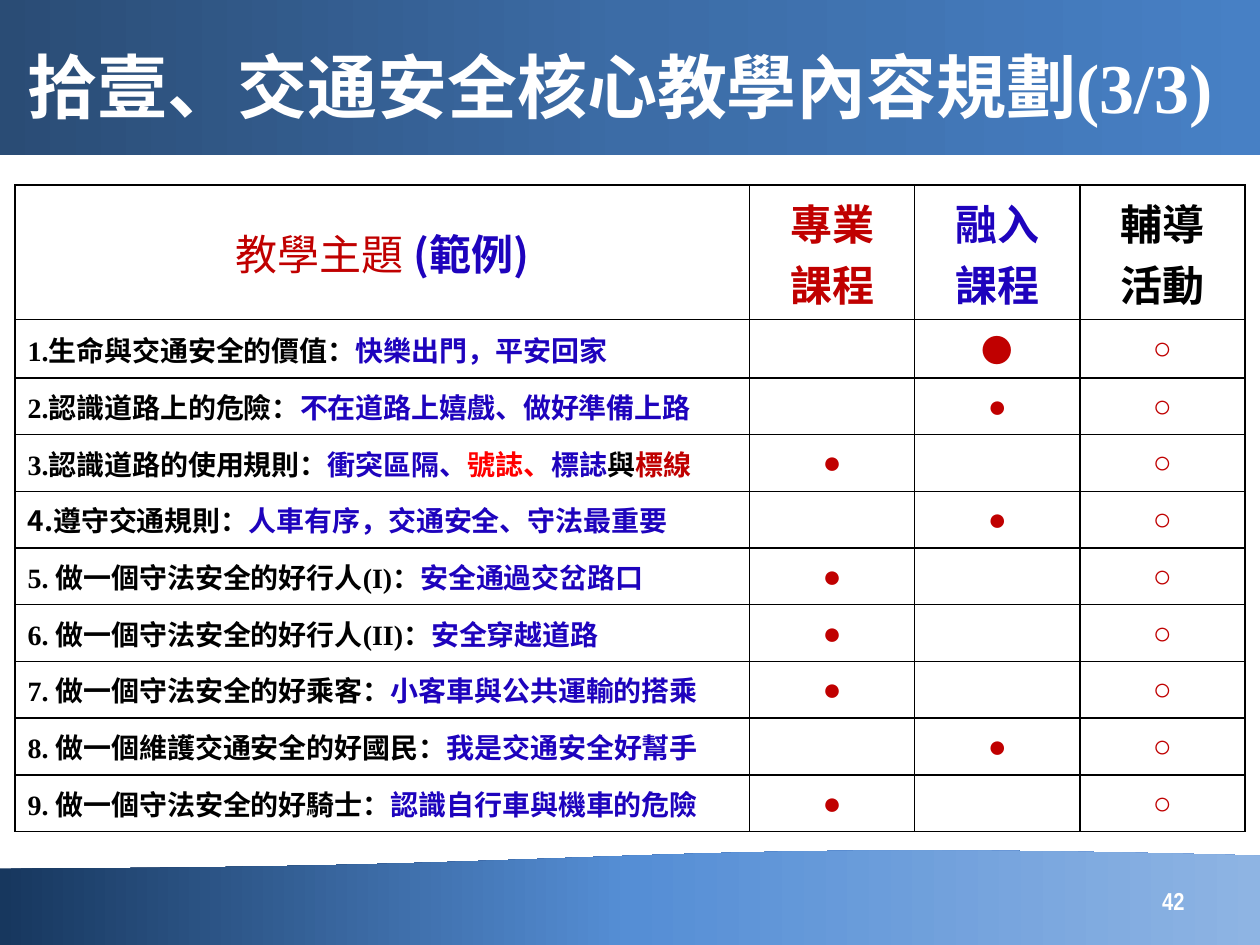
from lxml import etree
from pptx import Presentation
from pptx.dml.color import RGBColor
from pptx.enum.shapes import MSO_SHAPE
from pptx.enum.text import MSO_ANCHOR, MSO_AUTO_SIZE, PP_ALIGN
from pptx.oxml.ns import qn
from pptx.util import Inches, Pt

CENTER, LEFT, RIGHT = PP_ALIGN.CENTER, PP_ALIGN.LEFT, PP_ALIGN.RIGHT
JUSTIFY = PP_ALIGN.JUSTIFY
MIDDLE = MSO_ANCHOR.MIDDLE
TITLE_ONLY = 5

COLORS = {"black": "000000", "white": "FFFFFF", "blue": "1E03BD",
          "dark_red": "C00000", "red": "FF0000"}
HEADER_STOPS = [(0, "2A4C75"), (50, "3C6CA6"), (100, "4780C5")]
FOOTER_STOPS = [(0, "17375E"), (50, "558ED5"), (100, "8EB4E3")]

SERIF, SANS, NARROW = "Times New Roman", "Arial", "Arial Narrow"
CJK, CJK_TC = "Noto Sans CJK SC", "Noto Sans CJK TC"

COL_WIDTHS = [5.83, 1.31, 1.31, 1.31]
HEADER_HEIGHT, ROW_HEIGHT = 0.89, 0.45
COURSE_HEADS = [("專業", "課程", "dark_red"), ("融入", "課程", "blue"),
                ("輔導", "活動", "black")]

# Topic, its examples as (text, colour), and the column of the filled dot
TOPICS = [
    ("1.生命與交通安全的價值：", [("快樂出門，平安回家", "blue")], 2),
    ("2.認識道路上的危險：", [("不在道路上嬉戲、做好準備上路", "blue")], 2),
    ("3.認識道路的使用規則：",
     [("衝突區隔、", "blue"), ("號誌、", "red"), ("標誌", "blue"),
      ("與", "black"), ("標線", "dark_red")], 1),
    ("4.遵守交通規則：", [("人車有序，交通安全、守法最重要", "blue")], 2),
    ("5. 做一個守法安全的好行人(I)：", [("安全通過交岔路口", "blue")], 1),
    ("6. 做一個守法安全的好行人(II)：", [("安全穿越道路", "blue")], 1),
    ("7. 做一個守法安全的好乘客：", [("小客車與公共運輸的搭乘", "blue")], 1),
    ("8. 做一個維護交通安全的好國民：", [("我是交通安全好幫手", "blue")], 2),
    ("9. 做一個守法安全的好騎士：", [("認識自行車與機車的危險", "blue")], 1),
]


def add_run(p, text, size, color, font, bold=True, east_asian=CJK_TC):
    r = p.add_run()
    r.text = text
    r.font.size, r.font.bold, r.font.name = Pt(size), bold, font
    r.font.color.rgb = RGBColor.from_string(COLORS[color])
    ea = etree.SubElement(r.font._element, qn("a:ea"))
    ea.set("typeface", east_asian)


def add_band(slide, shape_type, box, stops, angle=0, rotation=0):
    sp = slide.shapes.add_shape(shape_type, *map(Inches, box))
    sp.rotation = rotation
    sp.shadow.inherit = False
    sp.line.fill.background()
    sp.fill.gradient()
    sp.fill.gradient_angle = angle
    gs_list = sp._element.spPr.find(".//" + qn("a:gsLst"))
    for gs in list(gs_list):
        gs_list.remove(gs)
    for pos, color in stops:
        gs = etree.SubElement(gs_list, qn("a:gs"), pos=str(pos * 1000))
        etree.SubElement(gs, qn("a:srgbClr"), val=color)


def add_title(slide, box):
    title = slide.shapes.title
    title.left, title.top, title.width, title.height = map(Inches, box)
    slide.shapes._spTree.append(title._element)  # in front of the band
    tf = title.text_frame
    tf.vertical_anchor, tf.word_wrap = MIDDLE, True
    tf.auto_size = MSO_AUTO_SIZE.NONE
    p = tf.paragraphs[0]
    p.alignment = LEFT
    add_run(p, "拾壹、交通安全核心教學內容規劃(3/3)", 40, "white", SERIF)


def set_borders(cell):
    tc_pr = cell._tc.get_or_add_tcPr()
    for i, side in enumerate(("a:lnL", "a:lnR", "a:lnT", "a:lnB")):
        ln = etree.Element(qn(side), w=str(Pt(1)))
        fill = etree.SubElement(ln, qn("a:solidFill"))
        etree.SubElement(fill, qn("a:srgbClr"), val=COLORS["black"])
        tc_pr.insert(i, ln)


def add_mark(cell, mark, font=SANS, bold=False):
    p = cell.text_frame.paragraphs[0]
    p.alignment = CENTER
    add_run(p, mark, 18, "dark_red", font, bold, east_asian=font)


def fill_header(table):
    p = table.cell(0, 0).text_frame.paragraphs[0]
    p.alignment = CENTER
    add_run(p, "教學主題 ", 24, "dark_red", CJK, bold=False)
    add_run(p, "(範例)", 24, "blue", CJK)
    for col, (upper, lower, color) in enumerate(COURSE_HEADS, start=1):
        tf = table.cell(0, col).text_frame
        for p, text in ((tf.paragraphs[0], upper), (tf.add_paragraph(), lower)):
            p.alignment = CENTER
            add_run(p, text, 24, color, CJK)


def fill_topic(table, row, topic, examples, dot_col):
    p = table.cell(row, 0).text_frame.paragraphs[0]
    p.alignment = JUSTIFY if row == 1 else LEFT
    if row <= 2:  # hanging indent
        p_pr = p._p.get_or_add_pPr()
        p_pr.set("marL", str(Inches(0.19)))
        p_pr.set("indent", str(Inches(-0.19)))
    font = CJK if row == 4 else SERIF
    for text, color in [(topic, "black")] + examples:
        add_run(p, text, 16, color, font)
    add_mark(table.cell(row, dot_col), "●", CJK_TC if row == 1 else SANS)
    add_mark(table.cell(row, 3), "○", bold=True)


def add_topic_table(slide, left, top):
    rows = len(TOPICS) + 1
    height = HEADER_HEIGHT + ROW_HEIGHT * len(TOPICS)
    frame = slide.shapes.add_table(rows, len(COL_WIDTHS), Inches(left), Inches(top),
                                   Inches(sum(COL_WIDTHS)), Inches(height))
    table = frame.table
    table.first_row = table.horz_banding = False
    for column, width in zip(table.columns, COL_WIDTHS):
        column.width = Inches(width)
    for i, row in enumerate(table.rows):
        row.height = Inches(ROW_HEIGHT if i else HEADER_HEIGHT)
    for cell in table.iter_cells():
        cell.vertical_anchor = MIDDLE
        cell.fill.background()
        set_borders(cell)
    fill_header(table)
    for row, (topic, examples, dot_col) in enumerate(TOPICS, start=1):
        fill_topic(table, row, topic, examples, dot_col)


def add_page_number(slide, box):
    tf = slide.shapes.add_textbox(*map(Inches, box)).text_frame
    tf.word_wrap, tf.vertical_anchor = True, MIDDLE
    p = tf.paragraphs[0]
    p.alignment = RIGHT
    add_run(p, "42", 14, "white", NARROW)


def main():
    prs = Presentation()
    prs.slide_width, prs.slide_height = Inches(10), Inches(7.5)
    slide = prs.slides.add_slide(prs.slide_layouts[TITLE_ONLY])

    # Background bands
    add_band(slide, MSO_SHAPE.FLOWCHART_DOCUMENT, (0, 6.74, 10, 0.77),
             FOOTER_STOPS, angle=180, rotation=180)
    add_band(slide, MSO_SHAPE.RECTANGLE, (0, 0, 10, 1.23), HEADER_STOPS)

    # Content
    add_topic_table(slide, 0.12, 1.47)
    add_title(slide, (0.12, 0.21, 9.76, 0.93))
    add_page_number(slide, (7.17, 6.95, 2.33, 0.4))
    prs.save("out.pptx")


if __name__ == "__main__":
    main()
